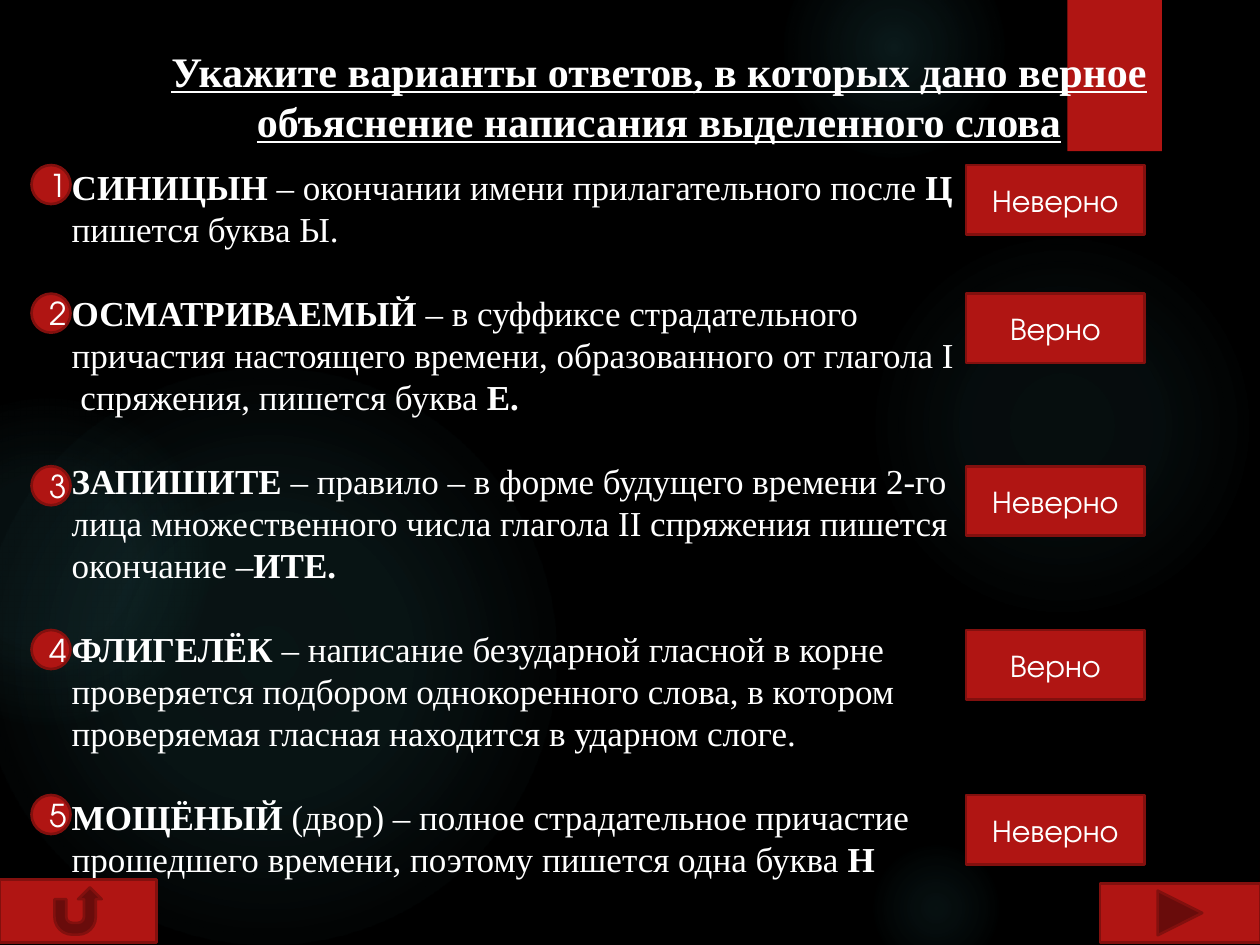
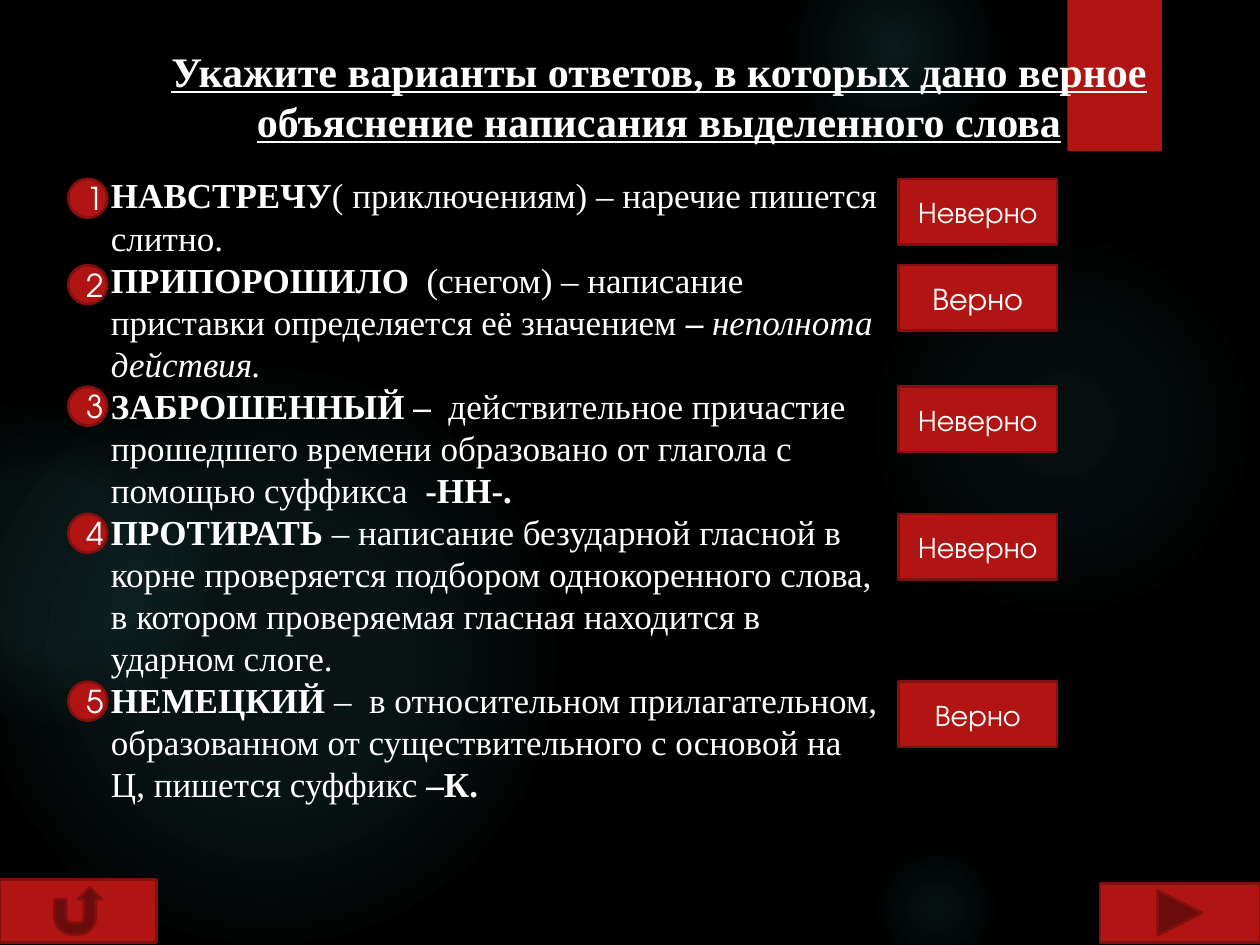
import pptx
import pptx.dml.color
import pptx.enum.shapes
import pptx.enum.text
import pptx.oxml
import pptx.oxml.ns
import pptx.util

Pt = pptx.util.Pt
MSO_SHAPE = pptx.enum.shapes.MSO_SHAPE
PP_ALIGN = pptx.enum.text.PP_ALIGN

COLORS = {"back": "000000", "red": "B01513", "edge": "82100E",
          "text": "FFFFFF", "glow": "50B9C1"}
SERIF, SANS = "Times New Roman", "TeX Gyre Adventor"
TITLE = ("Укажите варианты ответов, в которых дано верное "
         "объяснение написания выделенного слова")
BADGE = 22.3

# Background glows: left, top, diameter, then (position %, opacity %) stops
GLOWS = [
    (496, 132, 222, [(0, 7), (36, 6), (69, 0)]),
    (448, -36, 126, [(0, 14), (36, 7), (73, 0)]),
    (496, 480, 78, [(0, 9), (36, 5), (66, 0)]),
    (-12, 210, 330, [(0, 11), (36, 10), (75, 0)]),
    (-66, 228, 186, [(0, 8), (36, 8), (72, 0)]),
]

# Each item: top of its badge and button, verdict, button text size,
# and text segments as (text, style) with "b" for bold and "i" for italic
SLIDES = [
    {"body": (33.8, 90.7, 519, 405), "gap": 24, "badge_x": 18,
     "button": (552, 102.2, 39.6),
     "items": [
         (94.3, "Неверно", 18, [
             ("СИНИЦЫН", "b"),
             (" – окончании имени прилагательного после ", ""),
             ("Ц ", "b"), ("пишется буква Ы.", "")]),
         (167.8, "Верно", 18, [
             ("ОСМАТРИВАЕМЫЙ", "b"),
             (" – в суффиксе страдательного причастия настоящего времени, "
              "образованного от глагола I  спряжения, пишется буква ", ""),
             ("Е.", "b")]),
         (266.4, "Неверно", 18, [
             ("ЗАПИШИТЕ", "b"),
             (" – правило – в форме будущего времени 2-го лица множественного "
              "числа глагола II спряжения пишется окончание –", ""),
             ("ИТЕ.", "b")]),
         (360, "Верно", 18, [
             ("ФЛИГЕЛЁК ", "b"),
             ("– написание безударной гласной в корне проверяется подбором "
              "однокоренного слова, в котором проверяемая гласная находится "
              "в ударном слоге.", "")]),
         (454.3, "Неверно", 18, [
             ("МОЩЁНЫЙ", "b"),
             (" (двор) – полное страдательное причастие прошедшего времени, "
              "поэтому пишется одна буква ", ""),
             ("Н", "b")]),
     ]},
    {"body": (56.2, 95.8, 456.5, 400), "gap": 0, "badge_x": 39,
     "button": (513.4, 90.7, 37.4),
     "items": [
         (102.2, "Неверно", 17, [
             ("НАВСТРЕЧУ", "b"),
             ("( приключениям) – наречие пишется слитно.", "")]),
         (151.5, "Верно", 18, [
             ("ПРИПОРОШИЛО ", "b"),
             (" (снегом) – написание приставки определяется её значением ", ""),
             ("– ", "b"), ("неполнота действия.", "i")]),
         (221, "Неверно", 17, [
             ("ЗАБРОШЕННЫЙ – ", "b"),
             (" действительное причастие прошедшего времени образовано "
              "от глагола с помощью суффикса  ", ""),
             ("-НН-.", "b")]),
         (293.6, "Неверно", 17, [
             ("ПРОТИРАТЬ ", "b"),
             ("– написание безударной гласной в корне проверяется подбором "
              "однокоренного слова, в котором проверяемая гласная находится "
              "в ударном слоге.", "")]),
         (389.5, "Верно", 17, [
             ("НЕМЕЦКИЙ ", "b"),
             ("–  в относительном прилагательном, образованном от "
              "существительного с основой на Ц, пишется суффикс ", ""),
             ("–К.", "b")]),
     ]},
]


def rgb(name):
    return pptx.dml.color.RGBColor.from_string(COLORS[name])


def style_font(font, name, size, bold=False, italic=False):
    font.name, font.size = name, Pt(size)
    font.bold, font.italic = bold, italic
    font.color.rgb = rgb("text")


def place(shape, x, y, w, h):
    shape.left, shape.top, shape.width, shape.height = map(Pt, (x, y, w, h))


def add_plain_shape(s, kind, x, y, w, h):
    sp = s.shapes.add_shape(kind, Pt(x), Pt(y), Pt(w), Pt(h))
    sp.shadow.inherit = False
    sp.line.fill.background()
    sp.fill.solid()
    sp.fill.fore_color.rgb = rgb("red")
    return sp


def add_red_shape(s, kind, x, y, w, h, text="", size=18):
    sp = add_plain_shape(s, kind, x, y, w, h)
    sp.line.color.rgb = rgb("edge")
    sp.line.width = Pt(1.5)
    if text:
        sp.text_frame.text = text
        p = sp.text_frame.paragraphs[0]
        p.alignment = PP_ALIGN.CENTER
        style_font(p.runs[0].font, SANS, size)
    return sp


def add_glow(s, x, y, d, stops):
    sp = add_plain_shape(s, MSO_SHAPE.OVAL, x, y, d, d)
    gs = "".join(
        f'<a:gs pos="{pos * 1000}"><a:srgbClr val="{COLORS["glow"]}">'
        f'<a:alpha val="{alpha * 1000}"/></a:srgbClr></a:gs>'
        for pos, alpha in stops)
    grad = pptx.oxml.parse_xml(
        f'<a:gradFill {pptx.oxml.ns.nsdecls("a")}><a:gsLst>{gs}</a:gsLst>'
        '<a:path path="circle"><a:fillToRect l="50000" t="50000" r="50000" '
        'b="50000"/></a:path></a:gradFill>')
    solid = sp._element.spPr.find(pptx.oxml.ns.qn("a:solidFill"))
    solid.getparent().replace(solid, grad)
    return sp


def build_backdrop(s, layout):
    """Draw the shared decoration once and hand it over to the layout."""
    decor = [add_glow(s, *glow) for glow in GLOWS]
    decor.append(add_plain_shape(s, MSO_SHAPE.RECTANGLE, 610, 0, 54, 86.4))
    for number, sp in enumerate(decor, 101):
        sp._element.nvSpPr.cNvPr.set("id", str(number))
        layout.shapes._spTree.append(sp._element)


def set_frame(shape, box):
    place(shape, *box)
    tf = shape.text_frame
    tf.word_wrap = True
    tf.auto_size = pptx.enum.text.MSO_AUTO_SIZE.NONE
    tf.vertical_anchor = pptx.enum.text.MSO_ANCHOR.TOP
    return tf


def fill_title(s):
    tf = set_frame(s.shapes.title, (50.4, 22.3, 652.3, 65.5))
    tf.text = TITLE
    p = tf.paragraphs[0]
    p.alignment = PP_ALIGN.CENTER
    p.line_spacing = Pt(28.6)
    style_font(p.runs[0].font, SERIF, 24, bold=True)
    p.runs[0].font.underline = True


def fill_body(s, box, gap, texts):
    tf = set_frame(s.placeholders[1], box)
    for i, segments in enumerate(texts):
        p = tf.add_paragraph() if i else tf.paragraphs[0]
        p.line_spacing = Pt(24)
        p.space_before, p.space_after = Pt(0), Pt(gap)
        pPr = p._p.get_or_add_pPr()
        pPr.set("marL", "0")
        pPr.set("indent", "0")
        pPr.append(pPr.makeelement(pptx.oxml.ns.qn("a:buNone"), {}))
        for text, style in segments:
            r = p.add_run()
            r.text = text
            style_font(r.font, SERIF, 20, style == "b", style == "i")


def add_answers(s, items, badge_x, button):
    x, w, h = button
    for number, (y, verdict, size, _) in enumerate(items, 1):
        add_red_shape(s, MSO_SHAPE.OVAL, badge_x, y, BADGE, BADGE, str(number))
        add_red_shape(s, MSO_SHAPE.RECTANGLE, x, y, w, h, verdict, size)


def add_navigation(s):
    add_red_shape(s, MSO_SHAPE.ACTION_BUTTON_FORWARD_OR_NEXT,
                  628.6, 504.7, 91.4, 34)
    add_red_shape(s, MSO_SHAPE.ACTION_BUTTON_RETURN, 0, 502.6, 89.3, 36)


def main():
    prs = pptx.Presentation()
    prs.slide_width, prs.slide_height = Pt(720), Pt(540)
    layout = prs.slide_layouts[1]
    fill = prs.slide_master.background.fill
    fill.solid()
    fill.fore_color.rgb = rgb("back")

    for i, task in enumerate(SLIDES):
        s = prs.slides.add_slide(layout)
        if i == 0:
            build_backdrop(s, layout)
        fill_title(s)
        fill_body(s, task["body"], task["gap"],
                  [item[-1] for item in task["items"]])
        add_answers(s, task["items"], task["badge_x"], task["button"])
        add_navigation(s)

    prs.save("out.pptx")


if __name__ == "__main__":
    main()
